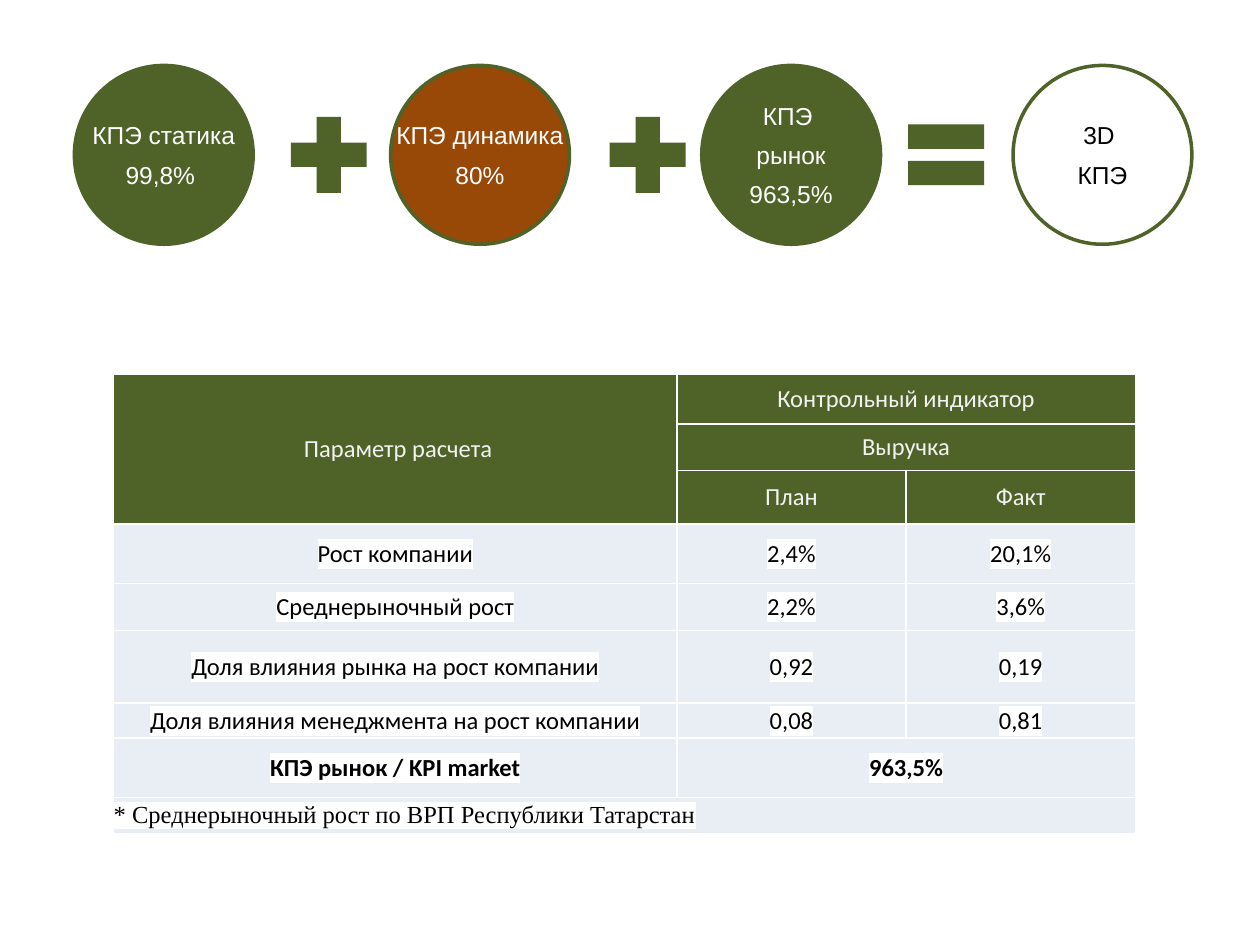
import pptx
import pptx.dml.color
import pptx.enum.shapes
import pptx.enum.text
import pptx.oxml
import pptx.oxml.ns
import pptx.util

Pt = pptx.util.Pt
SHAPES = pptx.enum.shapes.MSO_SHAPE
ALIGN = pptx.enum.text.PP_ALIGN
MIDDLE = pptx.enum.text.MSO_ANCHOR.MIDDLE

COLOURS = {
    "green": "4F6228",
    "brown": "984807",
    "white": "FFFFFF",
    "black": "000000",
    "header text": "F2F2F2",
    "body": "E9EDF4",
}


class SlideBuilder:
    font_size = 14

    def __init__(self, slide):
        self.slide = slide

    def rgb(self, colour):
        return pptx.dml.color.RGBColor.from_string(COLOURS[colour])

    def xml(self, tag, content, attributes=""):
        return pptx.oxml.parse_xml(
            f'<a:{tag} {pptx.oxml.ns.nsdecls("a")} {attributes}>{content}</a:{tag}>')

    def solid(self, kind, left, top, size, fill):
        shape = self.slide.shapes.add_shape(kind, Pt(left), Pt(top), Pt(size), Pt(size))
        shape.shadow.inherit = False
        shape.fill.solid()
        shape.fill.fore_color.rgb = self.rgb(fill)
        return shape

    def run(self, paragraph, text, font, colour, bold=False):
        run = paragraph.add_run()
        run.text = text
        run.font.size = Pt(self.font_size)
        run.font.name = font
        run.font.bold = bold
        run.font.color.rgb = self.rgb(colour)
        return run

    def circle(self, left, top, size, lines, fill, text_colour):
        circle = self.solid(SHAPES.OVAL, left, top, size, fill)
        circle.line.color.rgb = self.rgb("green")
        circle.line.width = Pt(2)
        frame = circle.text_frame
        frame.word_wrap = False
        frame.vertical_anchor = MIDDLE
        frame.margin_left = frame.margin_right = Pt(1.4)
        frame.margin_top = frame.margin_bottom = Pt(1.4)
        for index, line in enumerate(lines):
            paragraph = frame.add_paragraph() if index else frame.paragraphs[0]
            paragraph.alignment = ALIGN.CENTER
            paragraph.space_after = Pt(5.6)
            self.run(paragraph, line, "Arial", text_colour)

    def operator(self, kind, left, top, size):
        self.solid(kind, left, top, size, "green").line.fill.background()

    def table(self, left, top, widths, heights):
        frame = self.slide.shapes.add_table(
            len(heights), len(widths), Pt(left), Pt(top), Pt(sum(widths)), Pt(sum(heights)))
        table = frame.table
        table.first_row = table.horz_banding = False
        for column, width in zip(table.columns, widths):
            column.width = Pt(width)
        for row, height in zip(table.rows, heights):
            row.height = Pt(height)
        return table

    def cell_style(self, cell, fill):
        cell.fill.solid()
        cell.fill.fore_color.rgb = self.rgb(fill)
        cell.margin_left = cell.margin_right = cell.margin_top = cell.margin_bottom = 0
        cell.vertical_anchor = MIDDLE
        line = f'<a:solidFill><a:srgbClr val="{COLOURS["white"]}"/></a:solidFill>'
        for index, side in enumerate(("lnL", "lnR", "lnT", "lnB")):
            border = self.xml(side, line, f'w="{Pt(1)}"')
            cell._tc.get_or_add_tcPr().insert(index, border)

    def cell_text(self, cell, text, colour, font="Calibri", bold=False,
                  align=ALIGN.CENTER, highlight=None):
        paragraph = cell.text_frame.paragraphs[0]
        paragraph.alignment = align
        run = self.run(paragraph, text, font, colour, bold)
        if highlight:
            mark = self.xml("highlight", f'<a:srgbClr val="{COLOURS[highlight]}"/>')
            run.font._element.find(pptx.oxml.ns.qn("a:solidFill")).addnext(mark)


def add_formula(builder):
    top, diameter = 37.4, 102.2
    circles = [
        (42.5, ["КПЭ статика", "99,8% "], "green", "white"),
        (223.2, ["КПЭ динамика", "80%"], "brown", "white"),
        (401, ["КПЭ ", "рынок", "963,5%"], "green", "white"),
        (578.9, ["3D ", "КПЭ"], "white", "black"),
    ]
    for left, lines, fill, text_colour in circles:
        builder.circle(left, top, diameter, lines, fill, text_colour)

    operator_size = 59
    operator_top = top + (diameter - operator_size) / 2
    for kind, left in [(SHAPES.MATH_PLUS, 158.4), (SHAPES.MATH_PLUS, 340.6),
                       (SHAPES.MATH_EQUAL, 511.2)]:
        builder.operator(kind, left, operator_top, operator_size)


def add_calculation(builder):
    # None continues the merged cell above or to the left.
    rows = [
        [" Параметр расчета", "Контрольный индикатор", None],
        [None, "Выручка", None],
        [None, "План", "Факт"],
        ["Рост компании", "2,4%", "20,1%"],
        ["Среднерыночный рост", "2,2%", "3,6%"],
        ["Доля влияния рынка на рост компании", "0,92", "0,19"],
        ["Доля влияния менеджмента на рост компании", "0,08", "0,81"],
        ["КПЭ рынок / KPI market", "963,5%", None],
        ["* Среднерыночный рост по ВРП Республики Татарстан", None, None],
    ]
    header_rows, total_row, note_row = 3, 7, 8
    heights = [28.5, 26.6, 30.7, 34, 26.6, 41.6, 20.1, 33.8, 20.8]
    table = builder.table(65, 213.8, [321.8, 131, 131], heights)

    for first, last in [((0, 0), (2, 0)), ((0, 1), (0, 2)), ((1, 1), (1, 2)),
                        ((total_row, 1), (total_row, 2)), ((note_row, 0), (note_row, 2))]:
        table.cell(*first).merge(table.cell(*last))

    for r, row in enumerate(rows):
        is_header = r < header_rows
        for c, text in enumerate(row):
            cell = table.cell(r, c)
            builder.cell_style(cell, "green" if is_header else "body")
            if text is None:
                continue
            if is_header:
                builder.cell_text(cell, text, "header text")
            elif r == note_row:
                builder.cell_text(cell, text, "black", font="Times New Roman",
                                  align=ALIGN.LEFT, highlight="white")
            else:
                builder.cell_text(cell, text, "black", bold=r == total_row,
                                  highlight="white")


def main():
    presentation = pptx.Presentation()
    presentation.slide_width = Pt(720)
    presentation.slide_height = Pt(540)
    blank_layout = presentation.slide_layouts[6]
    builder = SlideBuilder(presentation.slides.add_slide(blank_layout))
    add_formula(builder)
    add_calculation(builder)
    presentation.save("out.pptx")


if __name__ == "__main__":
    main()
